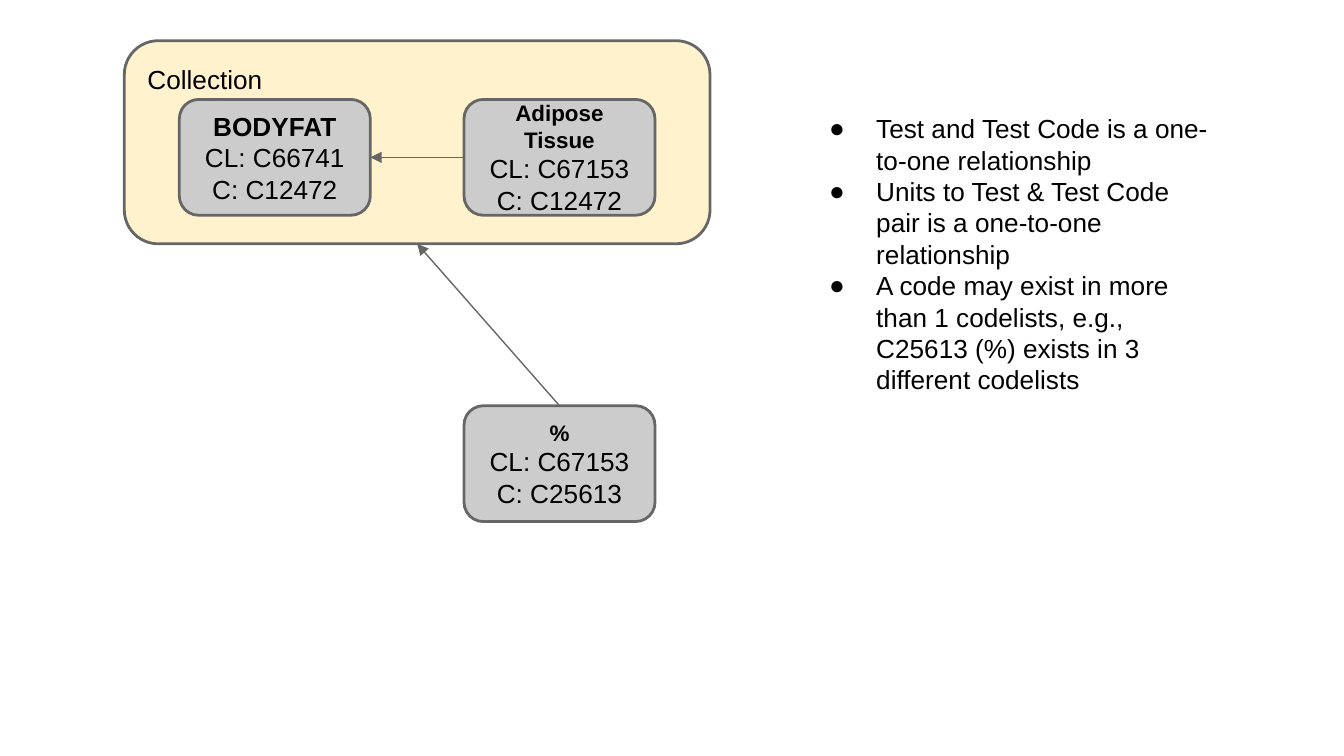
from lxml.etree import SubElement
from pptx import Presentation
from pptx.dml.color import RGBColor
from pptx.enum.shapes import MSO_CONNECTOR, MSO_SHAPE
from pptx.enum.text import MSO_ANCHOR, MSO_AUTO_SIZE, PP_ALIGN
from pptx.oxml.ns import qn
from pptx.util import Cm, Pt

FONT = "Arial"
BLACK, GREY, DARK, CREAM = "000000", "CCCCCC", "666666", "FFF2CC"
NODE_WIDTH, NODE_HEIGHT = 3.61, 2.19
LEFT_COLUMN, RIGHT_COLUMN = 3.39, 8.77
TOP_ROW, BOTTOM_ROW = 1.88, 7.67


def colour(value):
    return RGBColor.from_string(value)


def add_span(para, text, size=14, bold=False):
    span = para.add_run()
    span.text = text
    span.font.name = FONT
    span.font.size = Pt(size)
    span.font.bold = bold
    span.font.color.rgb = colour(BLACK)


def set_frame(frame, anchor):
    frame.word_wrap = True
    frame.auto_size = MSO_AUTO_SIZE.NONE
    frame.vertical_anchor = anchor
    frame.margin_left = frame.margin_right = Cm(0.25)
    frame.margin_top = frame.margin_bottom = Cm(0.25)


def add_box(page, left, top, width, height, fill, lines, align, anchor):
    """Rounded box; each line is (text, size, bold)."""
    box = page.shapes.add_shape(MSO_SHAPE.ROUNDED_RECTANGLE,
                                Cm(left), Cm(top), Cm(width), Cm(height))
    box.shadow.inherit = False
    box.fill.solid()
    box.fill.fore_color.rgb = colour(fill)
    box.line.color.rgb = colour(DARK)
    box.line.width = Pt(1.5)
    frame = box.text_frame
    set_frame(frame, anchor)
    for number, line in enumerate(lines):
        para = frame.add_paragraph() if number else frame.paragraphs[0]
        para.alignment = align
        add_span(para, *line)
    return box


def add_node(page, left, top, name, name_size, codelist, code):
    lines = [(name, name_size, True), (f"CL: {codelist}", 14, False),
             (f"C: {code}", 14, False)]
    return add_box(page, left, top, NODE_WIDTH, NODE_HEIGHT, GREY, lines,
                   PP_ALIGN.CENTER, MSO_ANCHOR.MIDDLE)


def add_arrow(page, target, target_side, source, source_side):
    """Line between two boxes with the arrowhead at the target."""
    arrow = page.shapes.add_connector(MSO_CONNECTOR.STRAIGHT, 0, 0, 0, 0)
    arrow.begin_connect(target, target_side)
    arrow.end_connect(source, source_side)
    arrow.line.color.rgb = colour(DARK)
    arrow.line.width = Pt(0.75)
    properties = arrow.line._get_or_add_ln()
    SubElement(properties, qn("a:headEnd"), type="triangle", w="med", len="med")
    SubElement(arrow._element.spPr, qn("a:effectLst"))


def fill_list(body, items):
    body.left, body.top = Cm(15.04), Cm(TOP_ROW)
    body.width, body.height = Cm(8.05), Cm(10.39)
    frame = body.text_frame
    set_frame(frame, MSO_ANCHOR.TOP)
    for number, item in enumerate(items):
        para = frame.add_paragraph() if number else frame.paragraphs[0]
        para.alignment = PP_ALIGN.LEFT
        para.space_before = para.space_after = Pt(0)
        # Hanging indent and round bullet
        properties = para._p.get_or_add_pPr()
        properties.set("marL", str(Cm(1.27)))
        properties.set("indent", str(-Cm(0.89)))
        bullet_colour = SubElement(properties, qn("a:buClr"))
        SubElement(bullet_colour, qn("a:srgbClr"), val=BLACK)
        SubElement(properties, qn("a:buFont"), typeface=FONT)
        SubElement(properties, qn("a:buChar"), char="●")
        add_span(para, item)


def main():
    deck = Presentation()
    deck.slide_width, deck.slide_height = Cm(25.4), Cm(14.29)
    page = deck.slides.add_slide(deck.slide_layouts[1])
    title = page.shapes.title._element
    title.getparent().remove(title)

    # Collection with its test code and test
    collection = add_box(page, 2.35, 0.77, 11.07, 3.84, CREAM,
                         [("Collection", 14, False)],
                         PP_ALIGN.LEFT, MSO_ANCHOR.TOP)
    test_code = add_node(page, LEFT_COLUMN, TOP_ROW,
                         "BODYFAT", 14, "C66741", "C12472")
    test = add_node(page, RIGHT_COLUMN, TOP_ROW,
                    "Adipose Tissue", 12, "C67153", "C12472")

    # Unit that belongs to the collection
    unit = add_node(page, RIGHT_COLUMN, BOTTOM_ROW,
                    "%", 12, "C67153", "C25613")

    # Relationships
    add_arrow(page, test_code, 3, test, 1)
    add_arrow(page, collection, 2, unit, 0)

    # Rules
    fill_list(page.placeholders[1], [
        "Test and Test Code is a one-to-one relationship",
        "Units to Test & Test Code pair is a one-to-one relationship",
        "A code may exist in more than 1 codelists, e.g., C25613 (%) "
        "exists in 3 different codelists",
    ])
    deck.save("out.pptx")


if __name__ == "__main__":
    main()
